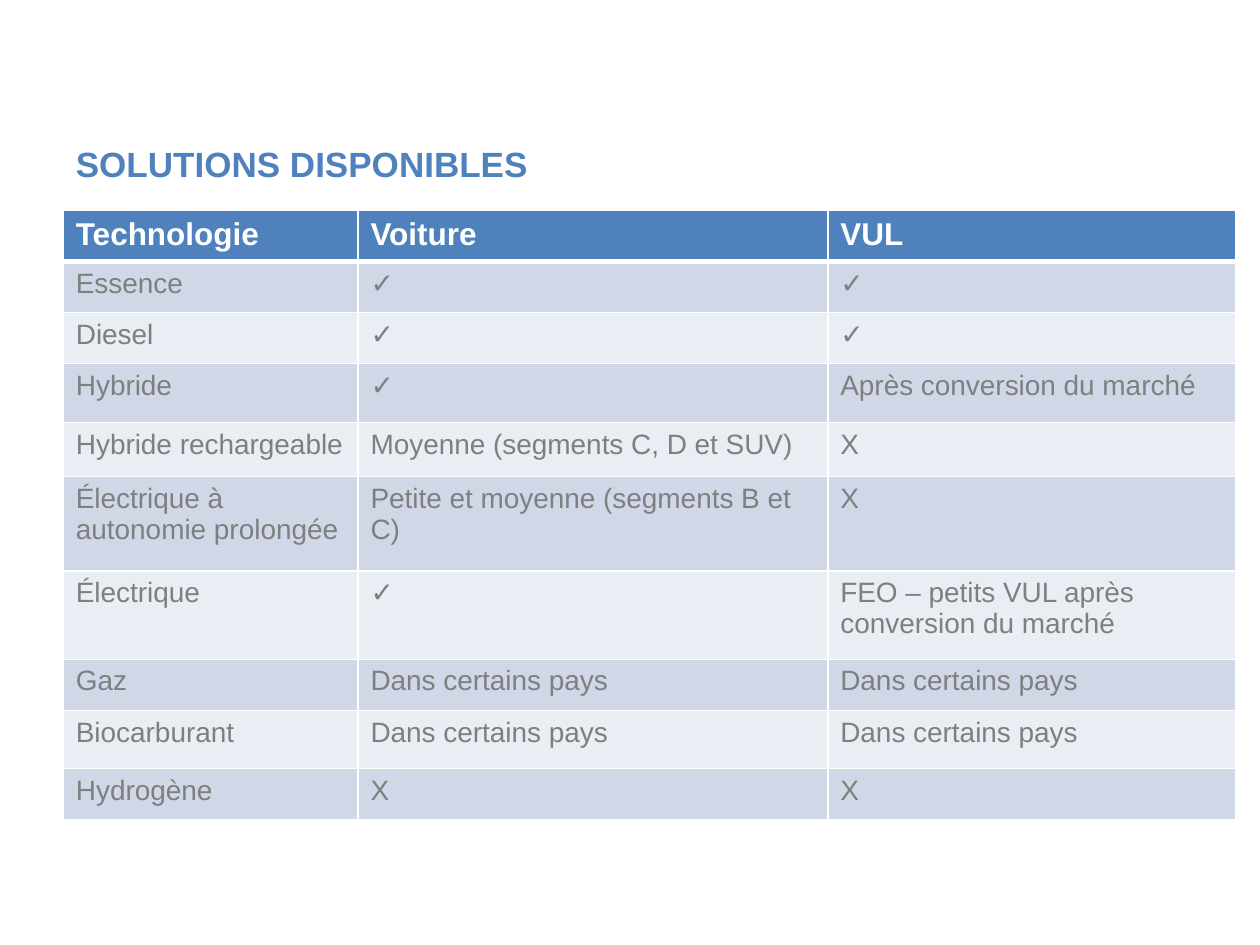
from lxml import etree
from pptx import Presentation
from pptx import util as u
from pptx.dml import color
from pptx.enum import text
from pptx.oxml import ns

COLORS = {
    "accent": "4F81BD",
    "white": "FFFFFF",
    "body": "7F7F7F",
    "odd_row": "D0D8E8",
    "even_row": "E9EDF4",
}
FONT = "Arial"
COLUMN_WIDTHS = [5.94, 9.47, 8.22]
ROW_HEIGHTS = [1.03, 1.03, 1.03, 1.19, 1.09, 1.9, 1.78, 1.03, 1.17, 1.03]
ROWS = [
    ("Technologie", "Voiture", "VUL"),
    ("Essence", "✓", "✓"),
    ("Diesel", "✓", "✓"),
    ("Hybride", "✓", "Après conversion du marché"),
    ("Hybride rechargeable", "Moyenne (segments C, D et SUV)", "X"),
    ("Électrique à autonomie prolongée", "Petite et moyenne (segments B et C)", "X"),
    ("Électrique", "✓", "FEO – petits VUL après conversion du marché"),
    ("Gaz", "Dans certains pays", "Dans certains pays"),
    ("Biocarburant", "Dans certains pays", "Dans certains pays"),
    ("Hydrogène", "X", "X"),
]


def rgb(name):
    return color.RGBColor.from_string(COLORS[name])


def add_run(paragraph, content, size, color_name, bold=False):
    run = paragraph.add_run()
    run.text = content
    run.font.name = FONT
    run.font.size = u.Pt(size)
    run.font.bold = bold
    run.font.color.rgb = rgb(color_name)


def set_margins(target):
    target.margin_left = target.margin_right = u.Cm(0.25)
    target.margin_top = target.margin_bottom = u.Cm(0.13)


def add_title(slide, content):
    shape = slide.shapes.add_textbox(u.Cm(1.28), u.Cm(2.74), u.Cm(22.5), u.Cm(1.8))
    frame = shape.text_frame
    frame.word_wrap = True
    frame.vertical_anchor = text.MSO_ANCHOR.TOP
    set_margins(frame)
    add_run(frame.paragraphs[0], content, 20, "accent", bold=True)


def set_borders(cell, top, bottom):
    properties = cell._tc.get_or_add_tcPr()
    for side, points in (("L", 1), ("R", 1), ("T", top), ("B", bottom)):
        line = etree.SubElement(properties, ns.qn(f"a:ln{side}"), w=str(u.Pt(points)))
        fill = etree.SubElement(line, ns.qn("a:solidFill"))
        etree.SubElement(fill, ns.qn("a:srgbClr"), val=COLORS["white"])


def fill_cell(cell, content, row_index):
    header = row_index == 0
    set_margins(cell)
    set_borders(cell, 3 if row_index == 1 else 1, 3 if header else 1)
    band = "odd_row" if row_index % 2 else "even_row"
    cell.fill.solid()
    cell.fill.fore_color.rgb = rgb("accent" if header else band)
    size, color_name = (18, "white") if header else (16, "body")
    add_run(cell.text_frame.paragraphs[0], content, size, color_name, bold=header)


def add_solutions_table(slide):
    frame = slide.shapes.add_table(
        len(ROWS), len(COLUMN_WIDTHS), u.Cm(1.28), u.Cm(4.24),
        u.Cm(sum(COLUMN_WIDTHS)), u.Cm(sum(ROW_HEIGHTS)))
    table = frame.table
    for column, width in zip(table.columns, COLUMN_WIDTHS):
        column.width = u.Cm(width)
    for row_index, (row, height) in enumerate(zip(table.rows, ROW_HEIGHTS)):
        row.height = u.Cm(height)
        for cell, content in zip(row.cells, ROWS[row_index]):
            fill_cell(cell, content, row_index)


def main():
    presentation = Presentation()
    presentation.slide_width = u.Cm(25.4)
    presentation.slide_height = u.Cm(19.05)
    slide = presentation.slides.add_slide(presentation.slide_layouts[6])
    add_title(slide, "SOLUTIONS DISPONIBLES")
    add_solutions_table(slide)
    presentation.save("out.pptx")


if __name__ == "__main__":
    main()
